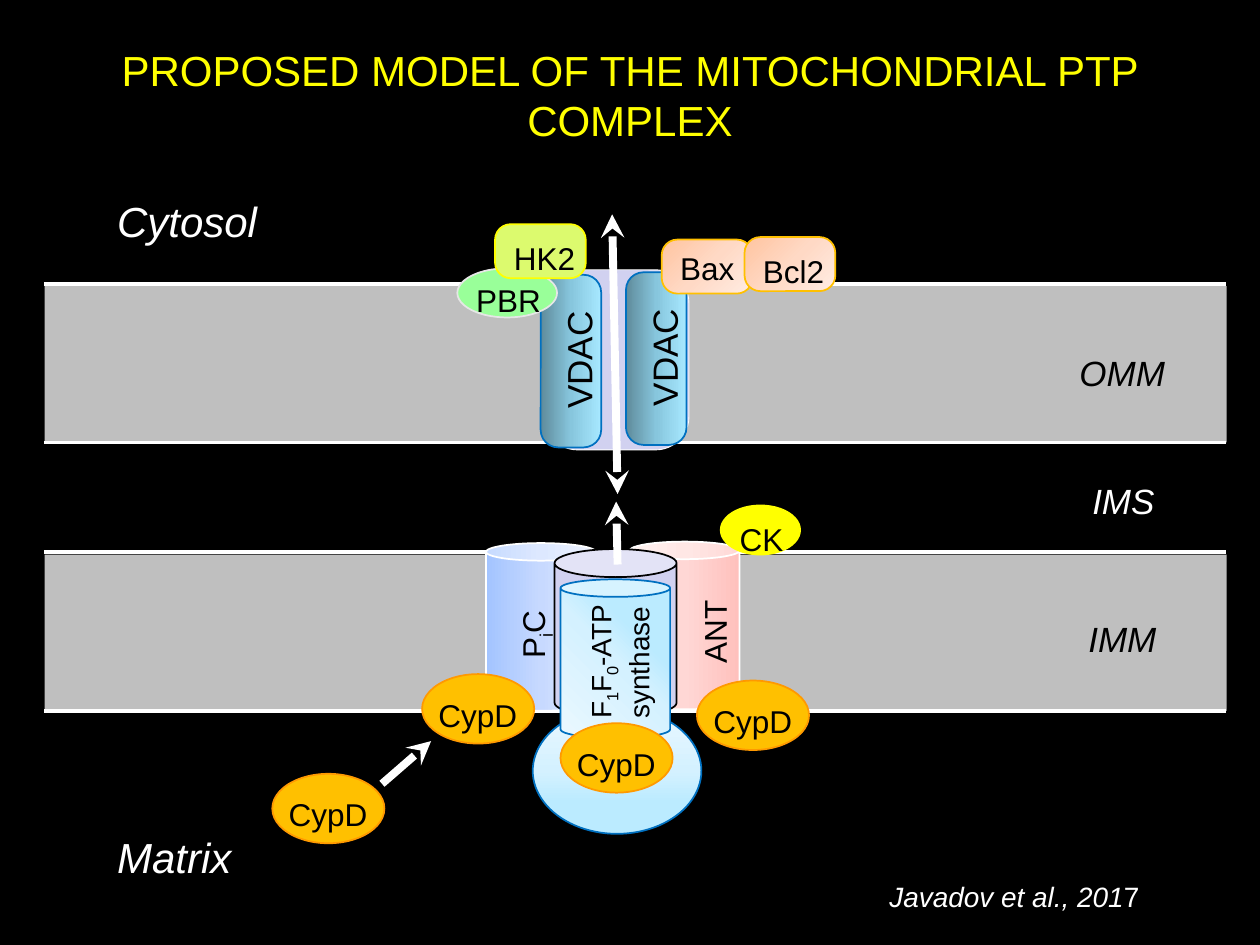
from lxml import etree
from pptx import Presentation
from pptx import util as u
from pptx.dml.color import RGBColor
from pptx.enum import shapes, text
from pptx.oxml.ns import qn

BLACK = RGBColor(0, 0, 0)
WHITE = RGBColor(255, 255, 255)
YELLOW = RGBColor(255, 255, 0)
GREY = RGBColor(0xBF, 0xBF, 0xBF)
BLUE = RGBColor(0, 0x70, 0xC0)
GOLD = RGBColor(0xFF, 0xC0, 0)
AMBER = RGBColor(0xFF, 0x99, 0)
LILAC = RGBColor(0xD1, 0xD1, 0xF0)
GREEN = RGBColor(0x99, 0xFF, 0x99)
PALE = RGBColor(0xE6, 0xE6, 0xE6)
LIME = RGBColor(0xDC, 0xFA, 0x6E)
SKY = RGBColor(0xBB, 0xEB, 0xFF)
SKY_MID = RGBColor(0xD4, 0xF1, 0xFF)
SKY_END = RGBColor(0xEA, 0xF8, 0xFF)

# Gradients: angle, clockwise from left to right, then (percent, colour) stops
BULB = (270, (25, SKY), (50, SKY_MID), (100, SKY_END))
STALK = (135, (32, SKY), (50, SKY_MID), (100, SKY_END))
TEAL = (0, (0, RGBColor(0x5F, 0x8B, 0x9B)), (50, RGBColor(0x87, 0xC6, 0xDD)),
        (100, RGBColor(0xA7, 0xE8, 0xFF)))
PEACH = (45, (0, RGBColor(0xFF, 0xC4, 0xA0)), (50, RGBColor(0xFF, 0xD9, 0xC5)),
         (100, RGBColor(0xFF, 0xEC, 0xE3)))
AZURE = (0, (0, RGBColor(0xA3, 0xC4, 0xFF)), (50, RGBColor(0xC7, 0xD9, 0xFF)),
         (100, RGBColor(0xE4, 0xEC, 0xFF)))
ROSE = (180, (0, RGBColor(0xFF, 0xC1, 0xBD)), (50, RGBColor(0xFF, 0xD7, 0xD5)),
        (100, RGBColor(0xFF, 0xEB, 0xEA)))

KIND = shapes.MSO_SHAPE
OVAL, RECT, ROUND, CAN = KIND.OVAL, KIND.RECTANGLE, KIND.ROUNDED_RECTANGLE, KIND.CAN


class Board:
    """Holds the text style and the current slide; all lengths are in cm."""
    font = "Arial"

    def __init__(self, slide):
        self.slide = slide
        fill = slide.background.fill
        fill.solid()
        fill.fore_color.rgb = BLACK

    def shape(self, kind, box, fill, line=None, width=1, adj=None):
        item = self.slide.shapes.add_shape(kind, *map(u.Cm, box))
        item.shadow.inherit = False
        if adj is not None:
            item.adjustments[0] = adj
        if isinstance(fill, RGBColor):
            item.fill.solid()
            item.fill.fore_color.rgb = fill
        else:
            self.blend(item, *fill)
        if line is None:
            item.line.fill.background()
        else:
            item.line.color.rgb = line
            item.line.width = u.Pt(width)

    def blend(self, item, angle, *stops):
        """Fill a shape with a linear gradient of any number of stops."""
        item.fill.gradient()
        item.fill.gradient_angle = (360 - angle) % 360
        group = item._element.spPr.find(qn("a:gradFill")).find(qn("a:gsLst"))
        for old in list(group):
            group.remove(old)
        for place, color in stops:
            stop = etree.SubElement(group, qn("a:gs"), pos=str(place * 1000))
            etree.SubElement(stop, qn("a:srgbClr"), val=str(color))

    def line(self, start, end, width, *ends):
        """Draw a white line; ends names those with an arrowhead."""
        item = self.slide.shapes.add_connector(
            shapes.MSO_CONNECTOR.STRAIGHT, *map(u.Cm, start + end))
        item.line.color.rgb = WHITE
        item.line.width = u.Pt(width)
        for name in ends:
            etree.SubElement(item.line._get_or_add_ln(), qn("a:" + name), type="stealth")
        etree.SubElement(item._element.spPr, qn("a:effectLst"))

    def label(self, box, rows, size=18, color=BLACK, italic=False, turn=0,
              wrap=False, space=1.5, align=None, anchor=text.MSO_ANCHOR.TOP):
        """Write rows of runs; a run is a string, or (string, style) where
        style is "sub" for subscript or "plain" for upright."""
        item = self.slide.shapes.add_textbox(*map(u.Cm, box))
        item.rotation = turn
        frame = item.text_frame
        frame.word_wrap = wrap
        frame.vertical_anchor = anchor
        for i, row in enumerate(rows):
            para = frame.add_paragraph() if i else frame.paragraphs[0]
            para.line_spacing = space
            para.alignment = align
            for part in row:
                words, style = part if isinstance(part, tuple) else (part, "")
                run = para.add_run()
                run.text = words
                run.font.name = self.font
                run.font.size = u.Pt(size)
                run.font.color.rgb = color
                run.font.italic = italic and style != "plain"
                if style == "sub":
                    run._r.get_or_add_rPr().set("baseline", "-25000")

    def tag(self, kind, box, fill, line, name, shift, size, adj=None, wrap=False):
        """Draw a protein with its name, shifted from its top left corner."""
        self.shape(kind, box, fill, line, adj=adj)
        spot = (box[0] + shift[0], box[1] + shift[1])
        self.label(spot + size, [[name]], wrap=wrap)


def draw(board):
    board.shape(OVAL, (10.74, 14.27, 3.4, 2.54), BULB, BLUE)
    for top in (11.18, 5.77):
        board.shape(RECT, (0.9, top, 23.83, 3.15), GREY)
    board.label((1.9, 0.71, 21.6, 2.39),
                [["PROPOSED MODEL OF THE MITOCHONDRIAL PTP COMPLEX"]], 24, YELLOW,
                wrap=True, space=1, align=text.PP_ALIGN.CENTER,
                anchor=text.MSO_ANCHOR.MIDDLE)
    board.label((17.68, 17.27, 5.61, 1.14),
                [["Javadov et al., 201", ("7", "plain")]], 16, WHITE, True)
    for y in (5.72, 8.92, 11.13, 14.33):
        board.line((0.89, y), (24.71, y), 2.25)
    for name, box, size, color in (
            ("Cytosol", (2.11, 3.3, 3.38, 1.8), 24, WHITE),
            ("Matrix", (2.11, 16.13, 2.84, 1.6), 24, WHITE),
            ("OMM", (21.51, 6.53, 2.26, 1.55), 20, BLACK),
            ("IMS", (21.77, 9.12, 1.78, 1.37), 20, WHITE),
            ("IMM", (21.69, 11.91, 1.91, 1.55), 20, BLACK)):
        board.label(box, [[name]], size, color, True)

    # Outer membrane channel
    board.shape(ROUND, (10.97, 5.44, 2.92, 3.63), LILAC, WHITE, 0.5, 0.23)
    board.line((12.34, 4.32), (12.45, 9.96), 4.5, "headEnd", "tailEnd")
    for x, y in ((10.9, 5.54), (12.62, 5.49)):
        board.shape(ROUND, (x, y, 1.22, 3.48), TEAL, BLUE, adj=0.29)
        board.label((x - 0.77, y + 1.02, 2.49, 1.37), [["VDAC"]], 20, turn=270)
    for name, x, y, drop, wide in (("Bax", 13.34, 4.83, -0.31, 1.63),
                                   ("Bcl2", 15.01, 4.78, -0.21, 1.75)):
        board.tag(ROUND, (x, y, 1.83, 1.09), PEACH, GOLD, name,
                  (0.12, drop), (wide, 1.27), 0.29)
    board.tag(OVAL, (9.22, 5.41, 2.01, 0.99), GREEN, PALE, "PBR",
              (0.13, -0.25), (1.83, 1.27))
    board.tag(ROUND, (9.98, 4.52, 1.83, 1.09), LIME, YELLOW, "HK2",
              (0.13, -0.2), (1.75, 1.27), 0.29)

    # Inner membrane complex
    board.shape(CAN, (9.8, 10.95, 2.21, 3.38), AZURE, WHITE, adj=0.16)
    board.shape(CAN, (12.7, 10.92, 2.21, 3.38), ROSE, WHITE, adj=0.16)
    board.shape(CAN, (11.18, 11.07, 2.46, 3.38), LILAC, BLACK, adj=0.23)
    board.line((12.42, 10.11), (12.45, 11.38), 4.5, "headEnd")
    board.shape(CAN, (11.3, 11.68, 2.21, 3.2), STALK, BLUE, adj=0.16)
    for x, y in ((8.51, 13.59), (14.05, 13.72), (11.3, 14.58), (5.49, 15.6)):
        board.tag(OVAL, (x, y, 2.26, 1.4), GOLD, AMBER, "CypD",
                  (0.08, -0.07), (2.11, 1.27))
    board.line((8.69, 14.94), (7.7, 15.8), 4.5, "headEnd")
    board.tag(OVAL, (14.53, 10.19, 1.6, 0.99), YELLOW, YELLOW, "CK",
              (0.13, -0.21), (1.45, 1.42), wrap=True)
    board.label((9.5, 11.81, 2.01, 1.42), [["P", ("i", "sub"), "C"]],
                turn=270, wrap=True)
    board.label((10.8, 12.27, 3.3, 1.63),
                [["F", ("1", "sub"), "F", ("0", "sub"), "-ATP"], ["synthase"]],
                16, turn=270, wrap=True, space=1)
    board.label((13.31, 11.99, 1.83, 1.42), [["ANT"]], turn=270, wrap=True)


def main():
    deck = Presentation()
    deck.slide_width, deck.slide_height = u.Cm(25.4), u.Cm(19.05)
    draw(Board(deck.slides.add_slide(deck.slide_layouts[6])))
    deck.save("out.pptx")


if __name__ == "__main__":
    main()
